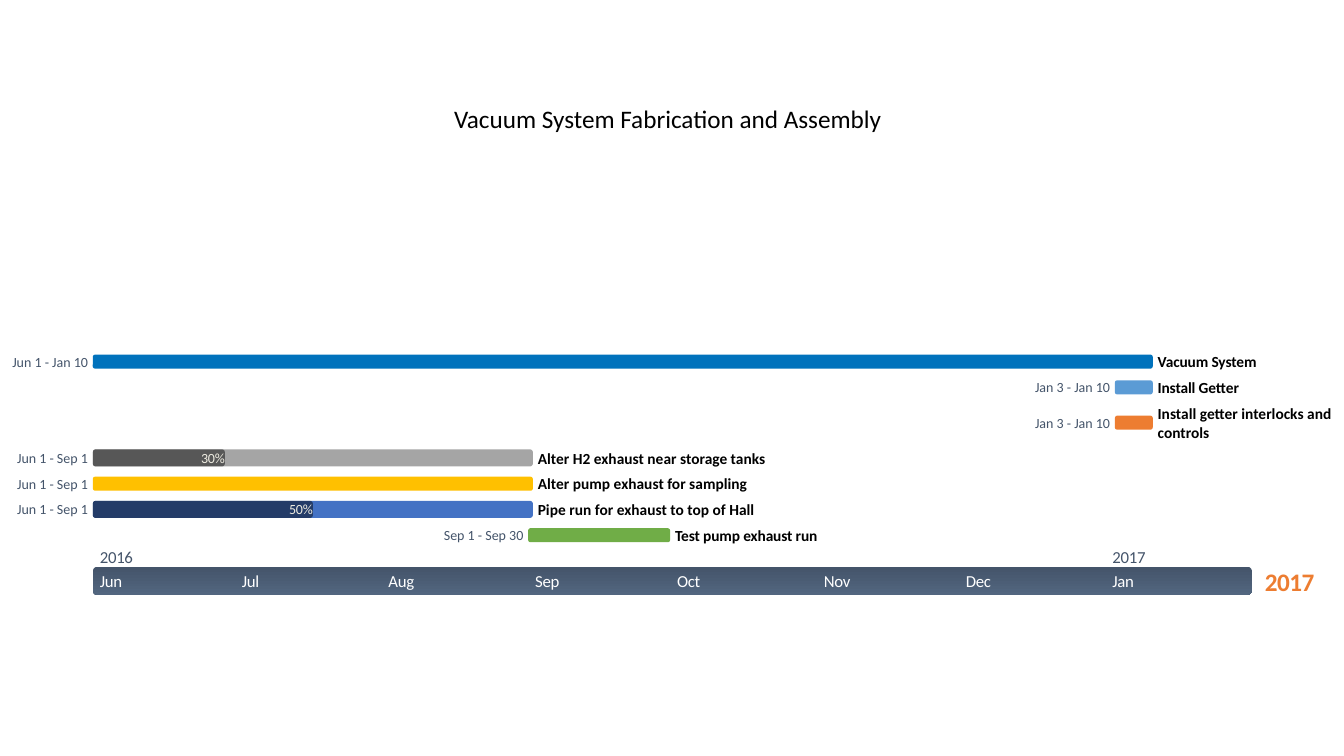
from dataclasses import dataclass
from itertools import accumulate

import pptx
import pptx.dml.color
import pptx.enum.shapes
import pptx.enum.text
import pptx.oxml
import pptx.oxml.ns
import pptx.util

Pt = pptx.util.Pt
ALIGN = pptx.enum.text.PP_ALIGN

DAY = 3.38  # points per day
CHART_LEFT = 66.3
AXIS_TOP, AXIS_WIDTH, AXIS_HEIGHT = 404.8, 828, 20.2
AXIS_TEXT_INDENT, AXIS_TEXT_WIDTH = 5, 26
BAR_HEIGHT, PROGRESS_HEIGHT = 10, 12.2
TEXT_GAP = 3.5
FIRST_ROW_TOP, LINE_HEIGHT, ROW_GAP = 251.5, 13.6, 4.8
SLATE, ORANGE, BLACK, WHITE = "44546A", "ED7D31", "000000", "FFFFFF"


@dataclass
class Month:
    name: str
    days: int
    year: str = ""


@dataclass
class Task:
    name: str
    dates: str
    first_day: int  # days after Jun 1
    end_day: int
    color: str
    name_width: float
    dates_width: float
    progress: float = 0
    lines: int = 1
    spacing: float = 0


@dataclass
class Style:
    size: float
    color: str
    bold: bool = False
    spacing: float = 0
    align: ALIGN = ALIGN.LEFT


MONTHS = [
    Month("Jun", 30, "2016"),
    Month("Jul", 31),
    Month("Aug", 31),
    Month("Sep", 30),
    Month("Oct", 31),
    Month("Nov", 30),
    Month("Dec", 31),
    Month("Jan", 31, "2017"),
]
TASKS = [
    Task("Vacuum System", "Jun 1 - Jan 10", 0, 224, "0072BC", 76, 57, spacing=-0.1),
    Task("Install Getter", "Jan 3 - Jan 10", 216, 224, "5B9BD5", 64, 57, spacing=-0.1),
    Task("Install getter interlocks and controls", "Jan 3 - Jan 10",
         216, 224, ORANGE, 126.7, 57, lines=2),
    Task("Alter H2 exhaust near storage tanks", "Jun 1 - Sep 1",
         0, 93, "A5A5A5", 170, 54, progress=0.3),
    Task("Alter pump exhaust for sampling", "Jun 1 - Sep 1", 0, 93, "FFC000", 156, 54),
    Task("Pipe run for exhaust to top of Hall", "Jun 1 - Sep 1",
         0, 93, "4472C4", 162, 54, progress=0.5),
    Task("Test pump exhaust run", "Sep 1 - Sep 30",
         92, 122, "70AD47", 109, 60, spacing=-0.1),
]
AXIS_STYLE = Style(12, WHITE, spacing=-0.2)
YEAR_STYLE = Style(12, SLATE, spacing=-0.2)
DATES_STYLE = Style(10, SLATE, align=ALIGN.RIGHT)
PROGRESS_STYLE = Style(10, "EEECE1", spacing=-0.1, align=ALIGN.RIGHT)


def rgb(color: str) -> pptx.dml.color.RGBColor:
    return pptx.dml.color.RGBColor.from_string(color)


def day_left(day: float) -> float:
    return CHART_LEFT + day * DAY


def add_text(page, text: str, left: float, middle: float, width: float,
             height: float, style: Style, wrap: bool = False) -> None:
    """Add a text box centred vertically on middle."""
    box = page.shapes.add_textbox(Pt(left), Pt(middle - height / 2), Pt(width), Pt(height))
    frame = box.text_frame
    frame.margin_left = frame.margin_right = frame.margin_top = frame.margin_bottom = 0
    frame.word_wrap = wrap
    frame.vertical_anchor = pptx.enum.text.MSO_ANCHOR.MIDDLE
    frame.text = text
    para = frame.paragraphs[0]
    para.alignment = style.align
    span = para.runs[0]
    span.font.name = "Calibri"
    span.font.size = Pt(style.size)
    span.font.bold = style.bold
    span.font.color.rgb = rgb(style.color)
    if style.spacing:
        span.font._element.set("spc", str(round(style.spacing * 100)))


def add_bar(page, left: float, middle: float, width: float, height: float, color: str):
    bar = page.shapes.add_shape(
        pptx.enum.shapes.MSO_SHAPE.ROUNDED_RECTANGLE,
        Pt(left), Pt(middle - height / 2), Pt(width), Pt(height))
    bar.shadow.inherit = False
    bar.line.fill.background()
    bar.fill.solid()
    bar.fill.fore_color.rgb = rgb(color)
    return bar


def shade(bar) -> None:
    """Make the bar a translucent overlay with a shadow."""
    qn = pptx.oxml.ns.qn
    properties = bar._element.spPr
    fill_color = properties.find(qn("a:solidFill")).find(qn("a:srgbClr"))
    fill_color.append(pptx.oxml.parse_xml(
        f'<a:alpha {pptx.oxml.ns.nsdecls("a")} val="35000"/>'))
    properties.find(qn("a:effectLst")).append(pptx.oxml.parse_xml(
        f'<a:outerShdw {pptx.oxml.ns.nsdecls("a")} blurRad="0" dist="0" dir="0">'
        '<a:srgbClr val="000000"><a:alpha val="50000"/></a:srgbClr></a:outerShdw>'))


def draw_axis(page) -> None:
    middle = AXIS_TOP + AXIS_HEIGHT / 2
    axis = add_bar(page, CHART_LEFT, middle, AXIS_WIDTH, AXIS_HEIGHT, SLATE)
    axis.fill.gradient()
    axis.fill.gradient_angle = 270
    for stop, color in zip(axis.fill.gradient_stops, (SLATE, "52667F")):
        stop.color.rgb = rgb(color)

    starts = accumulate((month.days for month in MONTHS), initial=0)
    for month, start in zip(MONTHS, starts):
        left = day_left(start) + AXIS_TEXT_INDENT
        add_text(page, month.name, left, middle, AXIS_TEXT_WIDTH, 13.7, AXIS_STYLE)
        if month.year:
            add_text(page, month.year, left, AXIS_TOP - 7, AXIS_TEXT_WIDTH, 14.4, YEAR_STYLE)
    add_text(page, "2017", 901.2, middle + 0.2, 40, 22.3,
             Style(18, ORANGE, True, -0.4, ALIGN.CENTER))


def draw_task(page, task: Task, middle: float) -> None:
    left, right = day_left(task.first_day), day_left(task.end_day)
    height = PROGRESS_HEIGHT if task.progress else BAR_HEIGHT
    add_bar(page, left, middle, right - left, height, task.color)
    if task.progress:
        done = (right - left) * task.progress
        shade(add_bar(page, left, middle, done, height, BLACK))
        add_text(page, f"{task.progress:.0%}", left + done - 22, middle, 22, 12.2,
                 PROGRESS_STYLE)
    add_text(page, task.dates, left - TEXT_GAP - task.dates_width, middle,
             task.dates_width, 12.2, DATES_STYLE)
    add_text(page, task.name, right + TEXT_GAP, middle, task.name_width,
             LINE_HEIGHT * task.lines, Style(11, BLACK, True, task.spacing),
             wrap=task.lines > 1)


def main() -> None:
    deck = pptx.Presentation()
    deck.slide_width, deck.slide_height = Pt(960), Pt(540)
    page = deck.slides.add_slide(deck.slide_layouts[6])
    draw_axis(page)
    top = FIRST_ROW_TOP
    for task in TASKS:
        row_height = task.lines * LINE_HEIGHT
        draw_task(page, task, top + row_height / 2)
        top += row_height + ROW_GAP
    add_text(page, "Vacuum System Fabrication and Assembly", 185, 84.8, 584, 29,
             Style(18, BLACK, align=ALIGN.CENTER), wrap=True)
    deck.save("out.pptx")


if __name__ == "__main__":
    main()
